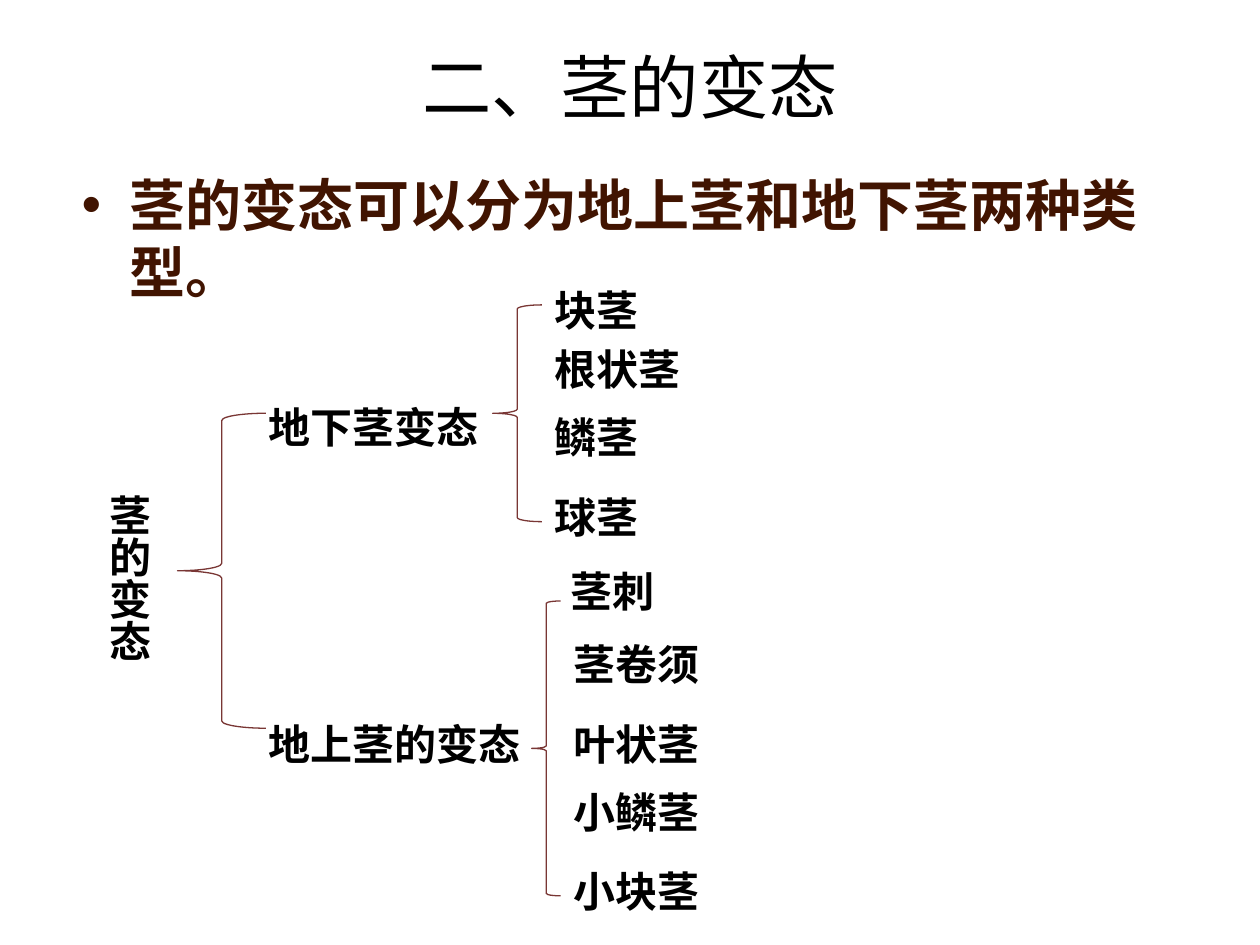
import pptx
import pptx.util
import pptx.dml.color
import pptx.enum.shapes
import pptx.enum.text
import pptx.oxml.ns
from lxml import etree

Inches, Pt = pptx.util.Inches, pptx.util.Pt
RGBColor = pptx.dml.color.RGBColor
Anchor = pptx.enum.text.MSO_ANCHOR
Align = pptx.enum.text.PP_ALIGN
AutoSize = pptx.enum.text.MSO_AUTO_SIZE
qn = pptx.oxml.ns.qn

BLACK = RGBColor(0x00, 0x00, 0x00)
BROWN = RGBColor(0x41, 0x14, 0x01)
BRACE_RED = RGBColor(0x79, 0x36, 0x34)
CJK_FONT = "Noto Sans CJK SC"


def write_text(para, text, size=24, color=BLACK, bold=True, font=CJK_FONT,
               align=Align.LEFT, spacing=None):
    para.alignment = align
    if spacing:
        para.line_spacing = Pt(spacing)
    span = para.add_run()
    span.text = text
    span.font.size = Pt(size)
    span.font.bold = bold
    span.font.name = font
    span.font.color.rgb = color
    east_asian = etree.SubElement(span.font._element, qn("a:ea"))
    east_asian.set("typeface", CJK_FONT)


class SlideBuilder:
    def __init__(self, page):
        self.page = page

    def box(self, left, top, width, height, inset_top=0.05, inset_bottom=0.05):
        box = self.page.shapes.add_textbox(
            Inches(left), Inches(top), Inches(width), Inches(height))
        frame = box.text_frame
        frame.word_wrap = True
        frame.margin_top = Inches(inset_top)
        frame.margin_bottom = Inches(inset_bottom)
        return frame

    def title(self, text):
        frame = self.box(0.5, 0.3, 9, 0.77)
        frame.vertical_anchor = Anchor.MIDDLE
        write_text(frame.paragraphs[0], text, size=39.6, bold=False,
                   align=Align.CENTER)

    def bullet(self, text):
        para = self.box(0.55, 1.25, 9, 1.3, inset_top=0.1).paragraphs[0]
        properties = para._p.get_or_add_pPr()
        properties.set("marL", str(Inches(0.38)))
        properties.set("indent", str(Inches(-0.38)))
        etree.SubElement(properties, qn("a:buFont")).set("typeface", "Arial")
        etree.SubElement(properties, qn("a:buChar")).set("char", "•")
        write_text(para, text, size=32, color=BROWN, font="Times New Roman",
                   spacing=38.4)

    def label(self, text, left, top, width):
        frame = self.box(left, top, width, 0.5, inset_top=0.07, inset_bottom=0.03)
        frame.word_wrap = False
        frame.auto_size = AutoSize.SHAPE_TO_FIT_TEXT
        write_text(frame.paragraphs[0], text, spacing=28.8)

    def vertical_label(self, text, left, top, width, height):
        frame = self.box(left, top, width, height)
        frame.word_wrap = False
        frame.auto_size = AutoSize.SHAPE_TO_FIT_TEXT
        frame._txBody.bodyPr.set("vert", "eaVert")
        write_text(frame.paragraphs[0], text)

    def brace(self, left, top, width, height):
        brace = self.page.shapes.add_shape(
            pptx.enum.shapes.MSO_SHAPE.LEFT_BRACE,
            Inches(left), Inches(top), Inches(width), Inches(height))
        brace.shadow.inherit = False
        brace.fill.background()
        brace.line.color.rgb = BRACE_RED
        brace.line.width = Pt(0.75)


def main():
    deck = pptx.Presentation()
    deck.slide_width, deck.slide_height = Inches(10), Inches(7.5)
    builder = SlideBuilder(deck.slides.add_slide(deck.slide_layouts[6]))

    # Heading and statement
    builder.title("二、茎的变态")
    builder.bullet("茎的变态可以分为地上茎和地下茎两种类型。")

    # Root of the tree
    builder.vertical_label("茎的变态", 0.66, 3.83, 0.61, 1.43)

    # Braces: whole tree, underground stems, aerial stems
    for place in [(1.41, 3.28, 0.7, 2.5), (3.91, 2.42, 0.39, 1.72),
                  (4.22, 4.77, 0.23, 2.34)]:
        builder.brace(*place)

    # Branches and their leaves
    for text, left, top, width in [
        ("地下茎变态", 2.03, 3.12, 1.89),
        ("块茎", 4.3, 2.19, 0.88),
        ("根状茎", 4.3, 2.66, 1.22),
        ("鳞茎", 4.3, 3.2, 0.88),
        ("球茎", 4.3, 3.83, 0.88),
        ("地上茎的变态", 2.03, 5.63, 2.23),
        ("茎刺", 4.43, 4.42, 0.88),
        ("茎卷须", 4.45, 5, 1.2),
        ("叶状茎", 4.45, 5.63, 1.22),
        ("小鳞茎", 4.45, 6.17, 1.22),
        ("小块茎", 4.45, 6.8, 1.22),
    ]:
        builder.label(text, left, top, width)

    deck.save("out.pptx")


if __name__ == "__main__":
    main()
